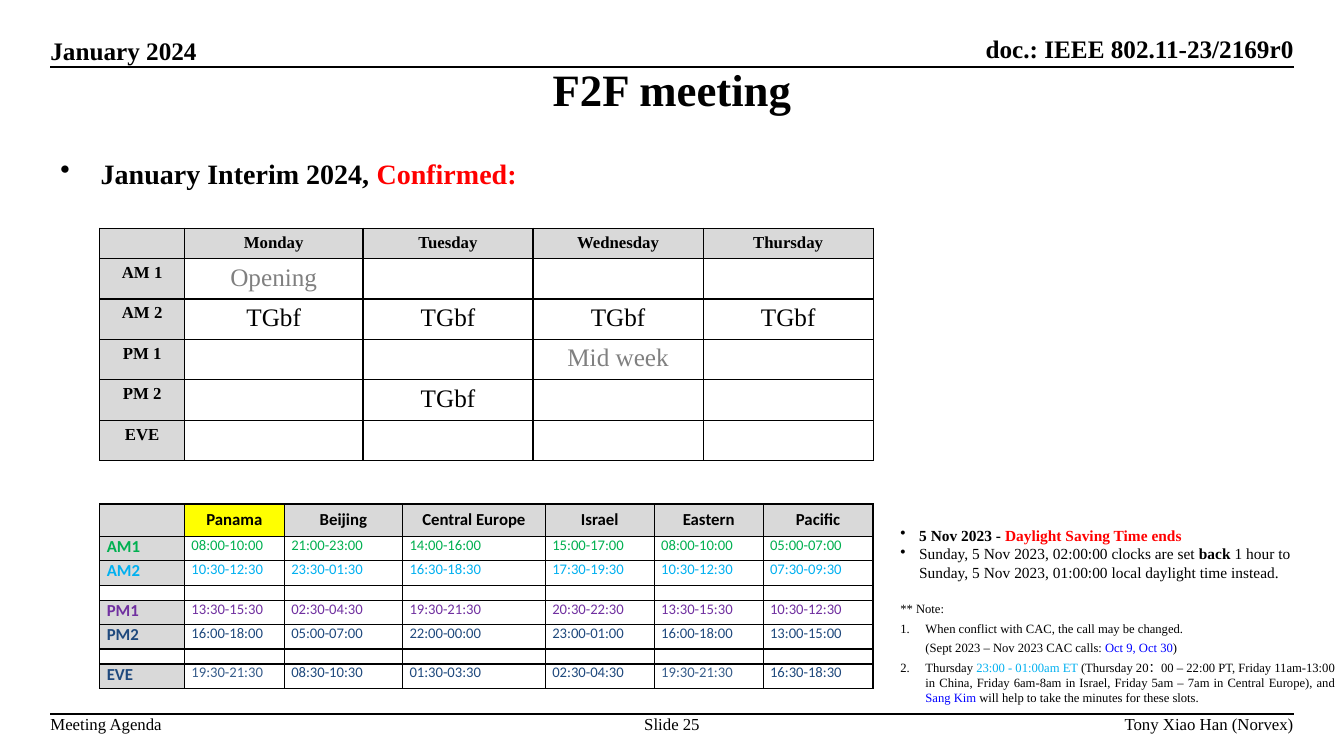
from dataclasses import dataclass

from lxml.etree import SubElement
from pptx import Presentation
from pptx.dml.color import RGBColor
from pptx.enum.shapes import MSO_CONNECTOR as Connector, MSO_SHAPE as Preset
from pptx.enum.text import MSO_ANCHOR as Anchor, PP_ALIGN as Align
from pptx.oxml.ns import qn
from pptx.util import Pt

BLACK = RGBColor(0x00, 0x00, 0x00)
WHITE = RGBColor(0xFF, 0xFF, 0xFF)
RED = RGBColor(0xFF, 0x00, 0x00)
YELLOW = RGBColor(0xFF, 0xFF, 0x00)
GRAY = RGBColor(0x80, 0x80, 0x80)
LIGHT_GRAY = RGBColor(0xD9, 0xD9, 0xD9)
GREEN = RGBColor(0x00, 0xB0, 0x50)
SKY = RGBColor(0x00, 0xB0, 0xF0)
PURPLE = RGBColor(0x70, 0x30, 0xA0)
NAVY = RGBColor(0x1F, 0x49, 0x7D)
STEEL = RGBColor(0x38, 0x5D, 0x8B)
BLUE = RGBColor(0x00, 0x00, 0xFF)

SERIF = "Times New Roman"
SANS = "Calibri"
LEFT, RIGHT = 36, 924
TABLE_LEFT = 71.3


@dataclass
class Run:
    text: str
    color: RGBColor = BLACK
    bold: bool = False


@dataclass
class Line:
    runs: list
    align: Align = Align.LEFT
    indent: float = 0
    bullet: str = ""
    number: int = 0
    after: float = 0


@dataclass
class Cell:
    text: str = ""
    size: float = 18
    color: RGBColor = BLACK
    bold: bool = False
    fill: RGBColor = None
    align: Align = Align.CENTER
    anchor: Anchor = Anchor.TOP


class SlideBuilder:
    def __init__(self, slide):
        self.slide = slide
        self.line_width = Pt(1)

    def set_line(self, paragraph, line, size, font):
        paragraph.alignment = line.align
        paragraph.space_after = Pt(line.after)
        properties = paragraph._p.get_or_add_pPr()
        properties.set("marL", str(Pt(line.indent)))
        if line.bullet:
            properties.set("indent", str(-Pt(line.indent)))
            SubElement(properties, qn("a:buChar"), char=line.bullet)
        elif line.number:
            properties.set("indent", str(-Pt(line.indent)))
            SubElement(properties, qn("a:buAutoNum"), type="arabicPeriod",
                       startAt=str(line.number))
        for item in line.runs:
            run = paragraph.add_run()
            run.text = item.text
            run.font.size = Pt(size)
            run.font.name = font
            run.font.bold = item.bold
            run.font.color.rgb = item.color

    def fill_frame(self, frame, lines, size, anchor, inset):
        frame.word_wrap = True
        frame.vertical_anchor = anchor
        if not inset:
            frame.margin_left = frame.margin_right = 0
            frame.margin_top = frame.margin_bottom = 0
        for index, line in enumerate(lines):
            paragraph = frame.add_paragraph() if index else frame.paragraphs[0]
            self.set_line(paragraph, line, size, SERIF)

    def text(self, box, lines, size, anchor=Anchor.TOP, inset=True):
        shape = self.slide.shapes.add_textbox(*map(Pt, box))
        self.fill_frame(shape.text_frame, lines, size, anchor, inset)

    def panel(self, box, lines, size):
        shape = self.slide.shapes.add_shape(Preset.RECTANGLE, *map(Pt, box))
        shape.shadow.inherit = False
        shape.fill.solid()
        shape.fill.fore_color.rgb = WHITE
        shape.line.fill.background()
        self.fill_frame(shape.text_frame, lines, size, Anchor.TOP, True)

    def rule(self, y):
        connector = self.slide.shapes.add_connector(
            Connector.STRAIGHT, Pt(LEFT), Pt(y), Pt(RIGHT), Pt(y))
        connector.line.color.rgb = BLACK
        connector.line.width = self.line_width
        SubElement(connector._element.spPr, qn("a:effectLst"))

    def border(self, cell):
        properties = cell._tc.get_or_add_tcPr()
        for index, side in enumerate(("lnL", "lnR", "lnT", "lnB")):
            edge = SubElement(properties, qn("a:" + side), w=str(self.line_width))
            fill = SubElement(edge, qn("a:solidFill"))
            SubElement(fill, qn("a:srgbClr"), val=str(BLACK))
            properties.insert(index, edge)

    def table(self, top, widths, heights, rows, font, side, edge):
        frame = self.slide.shapes.add_table(
            len(heights), len(widths), Pt(TABLE_LEFT), Pt(top),
            Pt(sum(widths)), Pt(sum(heights)))
        table = frame.table
        table.first_row = table.horz_banding = False
        for column, width in zip(table.columns, widths):
            column.width = Pt(width)
        for row, height, contents in zip(table.rows, heights, rows):
            row.height = Pt(height)
            for cell, content in zip(row.cells, contents):
                cell.margin_left = cell.margin_right = Pt(side)
                cell.margin_top = cell.margin_bottom = Pt(edge)
                cell.vertical_anchor = content.anchor
                if content.fill is None:
                    cell.fill.background()
                else:
                    cell.fill.solid()
                    cell.fill.fore_color.rgb = content.fill
                self.border(cell)
                paragraph = cell.text_frame.paragraphs[0]
                if content.text:
                    run = Run(content.text, content.color, content.bold)
                    self.set_line(paragraph, Line([run], content.align), content.size, font)
                else:
                    SubElement(paragraph._p, qn("a:endParaRPr"),
                               sz=str(int(content.size * 100)))


def meeting_rows():
    def heading(text):
        return Cell(text, 12, bold=True, fill=LIGHT_GRAY)

    sessions = {
        "AM 1": ["Opening", "", "", ""],
        "AM 2": ["TGbf"] * 4,
        "PM 1": ["", "", "Mid week", ""],
        "PM 2": ["", "TGbf", "", ""],
        "EVE": [""] * 4,
    }
    yield [heading(day) for day in ("", "Monday", "Tuesday", "Wednesday", "Thursday")]
    for slot, names in sessions.items():
        yield [heading(slot)] + [
            Cell(name, color=BLACK if name == "TGbf" else GRAY) for name in names]


def time_rows():
    zones = ["", "Panama", "Beijing", "Central Europe", "Israel", "Eastern", "Pacific"]
    slots = [
        ("AM1", GREEN, "08:00-10:00 21:00-23:00 14:00-16:00 15:00-17:00 08:00-10:00 05:00-07:00"),
        ("AM2", SKY, "10:30-12:30 23:30-01:30 16:30-18:30 17:30-19:30 10:30-12:30 07:30-09:30"),
        None,
        ("PM1", PURPLE, "13:30-15:30 02:30-04:30 19:30-21:30 20:30-22:30 13:30-15:30 10:30-12:30"),
        ("PM2", NAVY, "16:00-18:00 05:00-07:00 22:00-00:00 23:00-01:00 16:00-18:00 13:00-15:00"),
        None,
        ("EVE", NAVY, "19:30-21:30 08:30-10:30 01:30-03:30 02:30-04:30 19:30-21:30 16:30-18:30"),
    ]
    yield [Cell(zone, 12, bold=True, fill=YELLOW if zone == "Panama" else LIGHT_GRAY,
                anchor=Anchor.MIDDLE) for zone in zones]
    for slot in slots:
        if slot is None:
            yield [Cell(size=6) for zone in zones]
            continue
        name, color, times = slot
        yield [Cell(name, 12, color, True, LIGHT_GRAY, Align.LEFT)] + [
            Cell(time, 10.5, STEEL if time == "19:30-21:30" and name == "EVE" else color,
                 align=Align.LEFT) for time in times.split()]


def main():
    presentation = Presentation()
    presentation.slide_width, presentation.slide_height = Pt(960), Pt(540)
    builder = SlideBuilder(presentation.slides.add_slide(presentation.slide_layouts[6]))

    for text, top, height, size, bold, align in (
            ("January 2024", 25.2, 21.6, 18, True, Align.LEFT),
            ("doc.: IEEE 802.11-23/2169r0", 24, 21.6, 18, True, Align.RIGHT),
            ("Meeting Agenda", 510, 14.4, 12, False, Align.LEFT),
            ("Slide 25", 510, 14.4, 12, False, Align.CENTER),
            ("Tony Xiao Han (Norvex)", 510, 14.4, 12, False, Align.RIGHT)):
        builder.text((LEFT, top, RIGHT - LEFT, height),
                     [Line([Run(text, bold=bold)], align)], size,
                     Anchor.BOTTOM if bold else Anchor.TOP, inset=False)
    for y in (48, 510):
        builder.rule(y)

    builder.text((0, 42, 960, 42), [Line([Run("F2F meeting", bold=True)], Align.CENTER)],
                 32, Anchor.MIDDLE)
    builder.text((LEFT, 108, 516, 66), [Line(
        [Run("January Interim 2024, ", bold=True), Run("Confirmed:", RED, True)],
        Align.JUSTIFY, 28.8, "•", after=6)], 20)

    builder.table(360, [60.5, 71.3, 84.5, 102, 77.8, 77.8, 78.5],
                  [23, 17.5, 17.5, 10.7, 17.5, 17.5, 10.7, 17.5], time_rows(), SANS, 5, 0)
    builder.panel((636, 372, 299, 47.5), [
        Line([Run("5 Nov 2023 - ", bold=True), Run("Daylight Saving Time ends", RED, True)],
             indent=13.5, bullet="•"),
        Line([Run("Sunday, 5 Nov 2023, 02:00:00 clocks are set "), Run("back", bold=True),
              Run(" 1 hour to Sunday, 5 Nov 2023, 01:00:00 local daylight time instead.")],
             indent=13.5, bullet="•")], 11)
    builder.text((636, 426, 324.5, 82), [
        Line([Run("** Note:")], Align.JUSTIFY, after=3),
        Line([Run("When conflict with CAC, the call may be changed.")],
             Align.JUSTIFY, 18, number=1, after=3),
        Line([Run("(Sept 2023 – Nov 2023 CAC calls: "), Run("Oct 9, Oct 30", BLUE), Run(")")],
             Align.JUSTIFY, 18, after=3),
        Line([Run("Thursday "), Run("23:00 - 01:00am ET ", SKY),
              Run("(Thursday 20：00 – 22:00 PT, Friday 11am-13:00 in China, Friday 6am-8am "
                  "in Israel, Friday 5am – 7am in Central Europe), and "),
              Run("Sang Kim ", BLUE), Run("will help to take the minutes for these slots.")],
             Align.JUSTIFY, 18, number=2, after=3)], 9)
    builder.table(163, [60.5, 127.5] + [121.5] * 3, [21.5] + [28.9] * 5,
                  meeting_rows(), SERIF, 7.2, 3.6)
    presentation.save("out.pptx")


if __name__ == "__main__":
    main()
